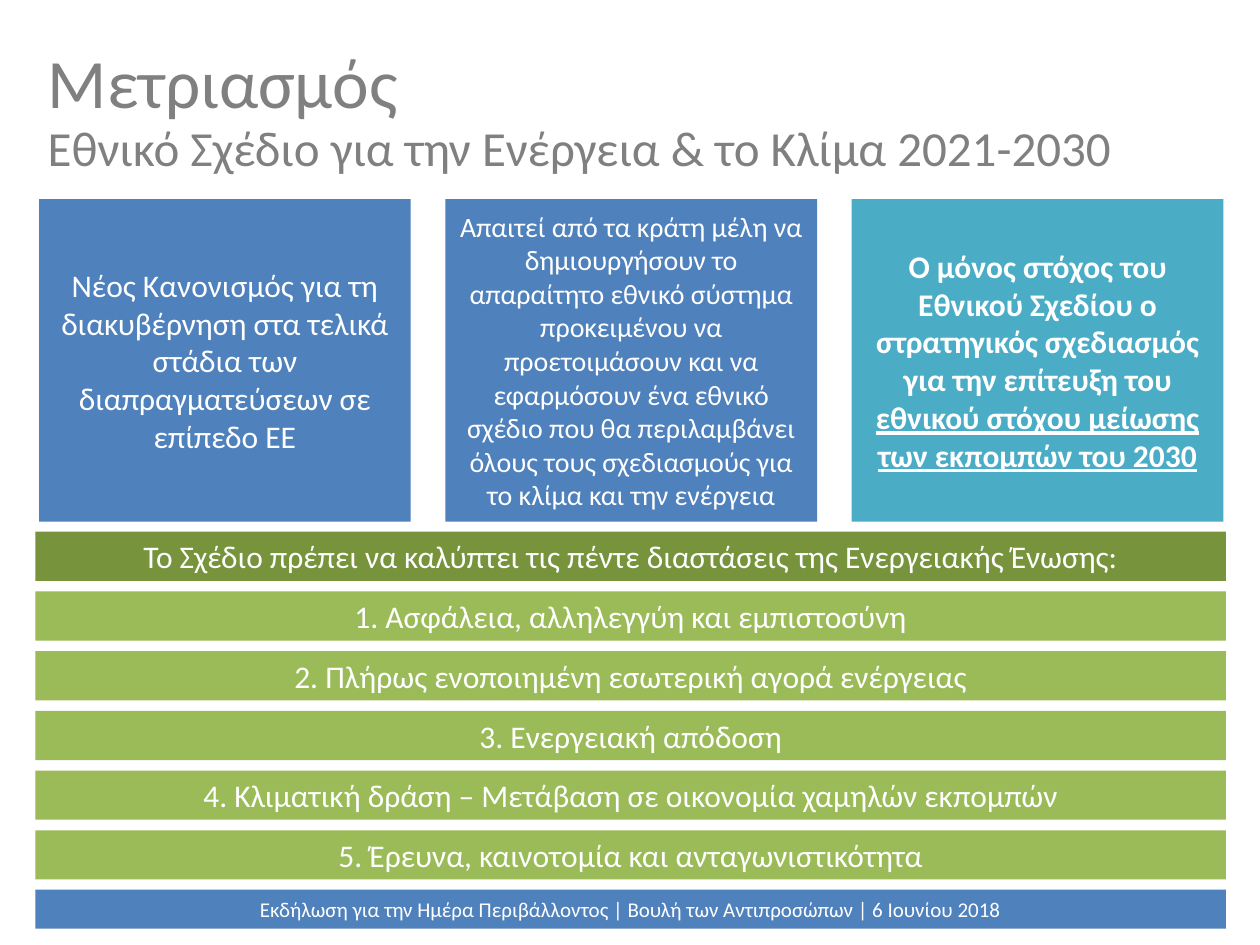
import pptx
import pptx.dml.color
import pptx.enum.shapes
import pptx.enum.text
import pptx.util

RGBColor = pptx.dml.color.RGBColor
Inches = pptx.util.Inches
ALIGN = pptx.enum.text.PP_ALIGN

GREY = RGBColor(0x80, 0x80, 0x80)
WHITE = RGBColor(0xFF, 0xFF, 0xFF)
BLUE = RGBColor(0x4F, 0x81, 0xBD)
TEAL = RGBColor(0x4B, 0xAC, 0xC6)
DARK_GREEN = RGBColor(0x77, 0x93, 0x3C)
GREEN = RGBColor(0x9B, 0xBB, 0x59)

FONT = "Calibri"
LEFT, WIDTH = 0.28, 9.45

# Each card holds its fill, font size and runs of (text, bold, underline).
CARDS = [
    (BLUE, 18, [("Νέος Κανονισμός για τη διακυβέρνηση στα τελικά στάδια των "
                 "διαπραγματεύσεων σε επίπεδο ΕΕ", False, False)]),
    (BLUE, 16, [("Απαιτεί από τα κράτη μέλη να δημιουργήσουν το απαραίτητο "
                 "εθνικό σύστημα προκειμένου να προετοιμάσουν και να "
                 "εφαρμόσουν ένα εθνικό σχέδιο που θα περιλαμβάνει όλους τους "
                 "σχεδιασμούς για το κλίμα και την ενέργεια", False, False)]),
    (TEAL, 18, [("Ο μόνος στόχος του Εθνικού Σχεδίου ο στρατηγικός σχεδιασμός "
                 "για την επίτευξη του ", True, False),
                ("εθνικού στόχου μείωσης των εκπομπών του 2030", True, True)]),
]
DIMENSIONS_HEADING = ("Το Σχέδιο πρέπει να καλύπτει τις πέντε διαστάσεις "
                      "της Ενεργειακής Ένωσης:")
DIMENSIONS = [
    "Ασφάλεια, αλληλεγγύη και εμπιστοσύνη",
    "Πλήρως ενοποιημένη εσωτερική αγορά ενέργειας",
    "Ενεργειακή απόδοση",
    "Κλιματική δράση – Μετάβαση σε οικονομία χαμηλών εκπομπών",
    "Έρευνα, καινοτομία και ανταγωνιστικότητα",
]
FOOTER = ("Εκδήλωση για την Ημέρα Περιβάλλοντος | Βουλή των Αντιπροσώπων | "
          "6 Ιουνίου 2018")


def write_text(shape, runs, size, color, alignment):
    frame = shape.text_frame
    frame.word_wrap = True
    frame.auto_size = pptx.enum.text.MSO_AUTO_SIZE.NONE
    frame.vertical_anchor = pptx.enum.text.MSO_ANCHOR.MIDDLE
    paragraph = frame.paragraphs[0]
    paragraph.alignment = alignment
    paragraph.font.name = FONT
    paragraph.font.size = pptx.util.Pt(size)
    paragraph.font.color.rgb = color
    for text, bold, underline in runs:
        run = paragraph.add_run()
        run.text = text
        if bold:
            run.font.bold = True
        if underline:
            run.font.underline = True


def add_panel(slide, box, fill, runs, size):
    shape = slide.shapes.add_shape(
        pptx.enum.shapes.MSO_SHAPE.RECTANGLE, *map(Inches, box))
    shape.shadow.inherit = False
    shape.fill.solid()
    shape.fill.fore_color.rgb = fill
    shape.line.fill.background()
    write_text(shape, runs, size, WHITE, ALIGN.CENTER)


def add_heading(slide, left, top, width, height):
    """Place the title and the subtitle, which overlap a little, in the box."""
    line_height = height * 0.57
    title = slide.shapes.title
    title.left, title.top = Inches(left), Inches(top)
    title.width, title.height = Inches(width), Inches(line_height)
    write_text(title, [("Μετριασμός", False, False)], 39.6, GREY, ALIGN.LEFT)
    subtitle = slide.shapes.add_textbox(
        Inches(left), Inches(top + height - line_height),
        Inches(width), Inches(line_height))
    write_text(
        subtitle,
        [("Εθνικό Σχέδιο για την Ενέργεια & το Κλίμα 2021-2030", False, False)],
        28, GREY, ALIGN.LEFT)


def add_cards(slide, left, top, width, height):
    card_width = 2.95
    pitch = (width - card_width) / (len(CARDS) - 1)
    for column, (fill, size, runs) in enumerate(CARDS):
        box = (left + column * pitch, top, card_width, height)
        add_panel(slide, box, fill, runs, size)


def add_dimensions(slide, left, top, width, height):
    rows = [(DARK_GREEN, DIMENSIONS_HEADING)]
    rows += [(GREEN, f"{number}. {text}")
             for number, text in enumerate(DIMENSIONS, start=1)]
    row_height = 0.39
    pitch = (height - row_height) / (len(rows) - 1)
    for row, (fill, text) in enumerate(rows):
        box = (left, top + row * pitch, width, row_height)
        add_panel(slide, box, fill, [(text, False, False)], 18)


def main():
    presentation = pptx.Presentation()
    presentation.slide_width = Inches(10)
    presentation.slide_height = Inches(7.5)
    title_only = presentation.slide_layouts[5]
    slide = presentation.slides.add_slide(title_only)
    add_heading(slide, LEFT, 0.3, WIDTH, 1.21)
    add_dimensions(slide, LEFT, 4.22, WIDTH, 2.76)
    add_cards(slide, 0.31, 1.58, 9.4, 2.56)
    add_panel(slide, (LEFT, 7.06, WIDTH, 0.31), BLUE,
              [(FOOTER, False, False)], 12)
    presentation.save("out.pptx")


if __name__ == "__main__":
    main()
